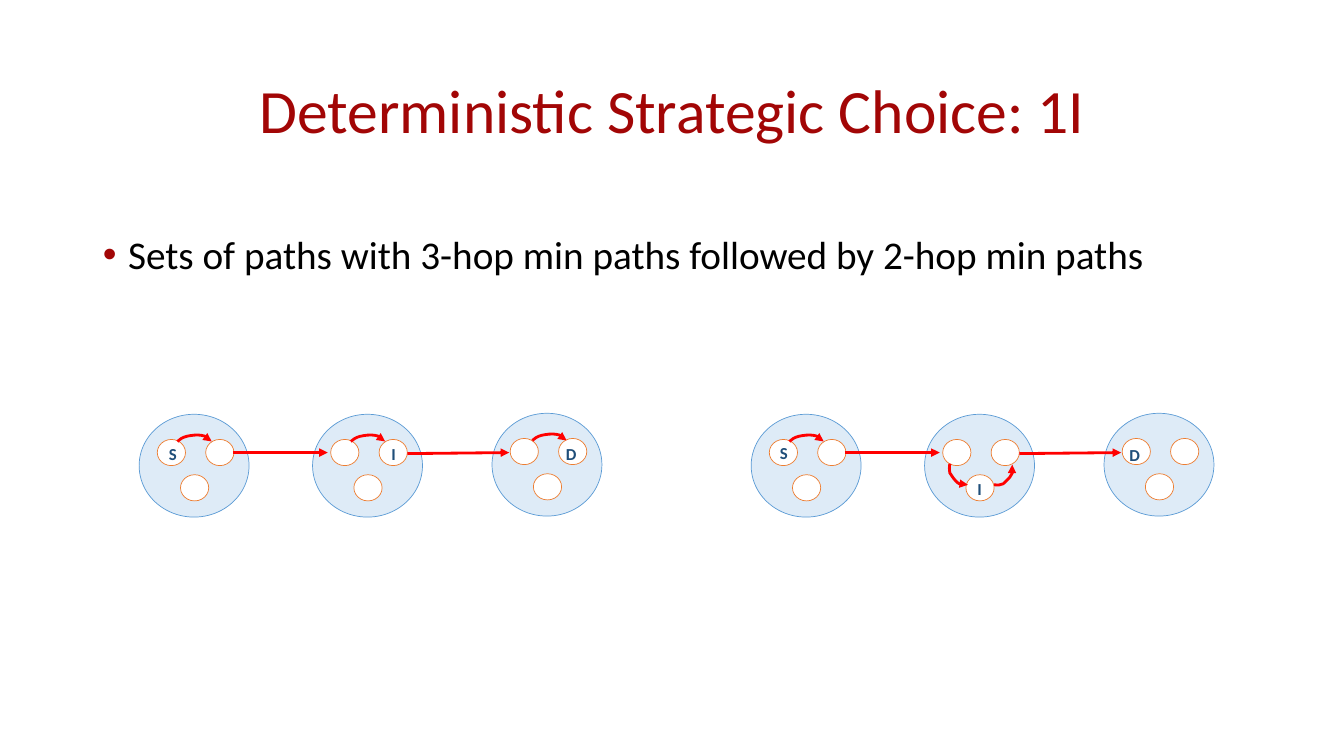
from lxml.etree import SubElement as Sub
from pptx import Presentation
from pptx.dml.color import RGBColor as RGB
from pptx.enum.shapes import MSO_CONNECTOR as LINK, MSO_SHAPE as SHAPE
from pptx.enum.text import MSO_ANCHOR as ANCHOR, MSO_AUTO_SIZE as FIT, PP_ALIGN as ALIGN
from pptx.oxml.ns import qn
from pptx.util import Inches, Pt

PX = Inches(1) // 100
HEX = {
    "title": "A20606", "body": "000000", "label": "1F4E79",
    "group": "DEEBF7", "rim": "5B9BD5",
    "node": "FFFFFF", "edge": "ED7D31", "hop": "FF0000",
}
NODES = [(18, 25), (66, 25), (41, 60)]
GROUPS = [(138, 411), (310, 411), (488, 410)]
LINKS = [(231, 449, 325, 449), (404, 450, 505, 449)]
SHIFT = 607
ARC = [(0, 0), (2, -2), (5, -4), (9, -5), (13, -6), (20, -7),
       (24, -6), (29, -5), (34, 0), (34, 0)]
DOWN = [(0, 0), (0, 3), (-1, 6), (0, 9), (2, 12), (5, 17),
        (8, 19), (11, 21), (18, 21), (18, 21)]
UP = [(0, 0), (3, 0), (6, 1), (9, -1), (11, -3), (16, -7),
      (17, -10), (19, -13), (18, -20), (18, -20)]


class Deck:
    def __init__(self):
        self.prs = Presentation()
        self.prs.slide_width, self.prs.slide_height = 1333 * PX, 750 * PX
        self.slide = self.prs.slides.add_slide(self.prs.slide_layouts[1])
        self.pen = self.slide.shapes

    def group(self):
        """Send the next elements into a new group."""
        self.pen = self.slide.shapes.add_group_shape().shapes

    def font(self, para, size, color, bold=False):
        font = para.font
        font.name, font.size, font.bold = "Calibri", Pt(size), bold
        font.color.rgb = RGB.from_string(HEX[color])

    def holder(self, index, box, text):
        """Move and fill a placeholder, and return its paragraph."""
        shape = self.slide.placeholders[index]
        shape.left, shape.top, shape.width, shape.height = [n * PX for n in box]
        frame = shape.text_frame
        frame.text = text
        frame.auto_size = FIT.NONE
        return frame.paragraphs[0]

    def title(self, box, text):
        para = self.holder(0, box, text)
        self.slide.shapes.title.text_frame.vertical_anchor = ANCHOR.MIDDLE
        para.alignment, para.line_spacing = ALIGN.CENTER, 0.9
        self.font(para, 44, "title")

    def body(self, box, text):
        para = self.holder(1, box, text)
        para.line_spacing, para.space_before = 1.5, Pt(10)
        props = para._p.get_or_add_pPr()
        props.set("marL", str(25 * PX))
        props.set("indent", str(-25 * PX))
        Sub(Sub(props, qn("a:buClr")), qn("a:srgbClr"), val=HEX["title"])
        Sub(props, qn("a:buFont"), typeface="Arial")
        Sub(props, qn("a:buChar"), char="•")
        self.font(para, 28, "body")

    def oval(self, x, y, w, h, fill, line):
        shape = self.pen.add_shape(SHAPE.OVAL, x * PX, y * PX, w * PX, h * PX)
        shape.shadow.inherit = False
        shape.fill.solid()
        shape.fill.fore_color.rgb = RGB.from_string(HEX[fill])
        shape.line.color.rgb = RGB.from_string(HEX[line])
        shape.line.width = Pt(0.5)

    def cluster(self, x, y):
        self.oval(x, y, 109, 102, "group", "rim")
        for dx, dy in NODES:
            self.oval(x + dx, y + dy, 28, 26, "node", "edge")

    def arrow(self, line):
        """Style a line as a red hop with a head at its end."""
        line.color.rgb = RGB.from_string(HEX["hop"])
        line.width = Pt(2)
        Sub(line._get_or_add_ln(), qn("a:tailEnd"), type="triangle")

    def link(self, x1, y1, x2, y2):
        link = self.pen.add_connector(
            LINK.STRAIGHT, x1 * PX, y1 * PX, x2 * PX, y2 * PX)
        self.arrow(link.line)
        Sub(link._element.spPr, qn("a:effectLst"))

    def curve(self, x, y, points):
        """Draw a chain of Bezier arcs, three points to each arc."""
        spots = [(x + dx, y + dy) for dx, dy in points]
        pen = self.pen.build_freeform(*spots[0], scale=PX)
        pen.add_line_segments(spots[1:], close=False)
        shape = pen.convert_to_shape()
        shape.shadow.inherit = False
        shape.fill.background()
        self.arrow(shape.line)
        path = next(shape._element.iter(qn("a:path")))
        steps = path.findall(qn("a:lnTo"))
        for i in range(0, len(steps), 3):
            arc = Sub(path, qn("a:cubicBezTo"))
            for step in steps[i:i + 3]:
                arc.append(step[0])
                path.remove(step)

    def label(self, x, y, text):
        box = self.pen.add_textbox(x * PX, y * PX, 21 * PX, 19 * PX)
        frame = box.text_frame
        frame.word_wrap = True
        frame.margin_left = frame.margin_right = 0
        frame.margin_top = frame.margin_bottom = 0
        para = frame.paragraphs[0]
        para.text = text
        para.alignment, para.line_spacing = ALIGN.CENTER, 1.07
        para.space_after = Pt(8)
        self.font(para, 12, "label", True)

    def route(self, shift, curves, labels):
        """Draw three linked clusters with their local hops and labels."""
        self.group()
        for x, y in GROUPS:
            self.cluster(x + shift, y)
        for x1, y1, x2, y2 in LINKS:
            self.link(x1 + shift, y1, x2 + shift, y2)
        for x, y, points in curves:
            self.curve(x + shift, y, points)
        for x, y, text in labels:
            self.label(x + shift, y, text)


def main():
    deck = Deck()
    deck.body((92, 200, 1150, 476),
              "Sets of paths with 3-hop min paths followed by 2-hop min paths")
    deck.title((92, 40, 1150, 145), "Deterministic Strategic Choice: 1I")
    deck.route(0, [(176, 438, ARC), (348, 438, ARC), (528, 437, ARC)],
               [(161, 439, "S"), (380, 439, "I"), (556, 439, "D")])
    deck.route(SHIFT, [(176, 438, ARC), (335, 460, DOWN), (379, 481, UP)],
               [(160, 438, "S"), (354, 474, "I"), (508, 440, "D")])
    deck.prs.save("out.pptx")


if __name__ == "__main__":
    main()
